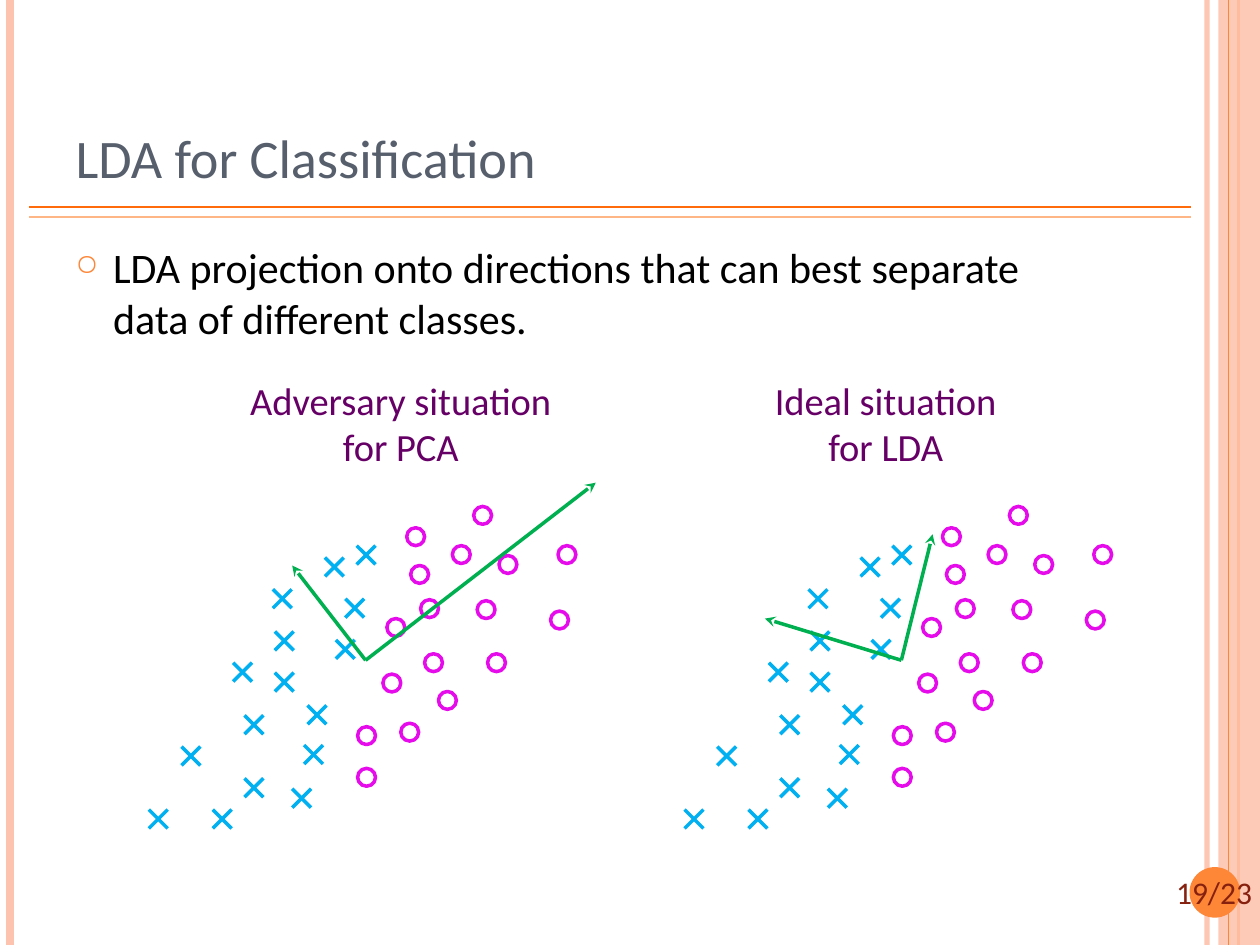
"""Build the slide comparing PCA and LDA projections of two classes."""
from lxml import etree
from pptx import Presentation
from pptx.dml.color import RGBColor
from pptx.enum import shapes, text
from pptx.oxml import ns
from pptx.util import Cm, Pt


def rgb(colour):
    return RGBColor.from_string(colour)


def add_line(x1, y1, x2, y2, colour, width, arrow=False, alpha=None):
    line = slide.shapes.add_connector(shapes.MSO_CONNECTOR.STRAIGHT, Cm(x1), Cm(y1), Cm(x2), Cm(y2))
    line.line.color.rgb = rgb(colour)
    line.line.width = Pt(width)
    properties = line._element.spPr
    etree.SubElement(properties, ns.qn("a:effectLst"))
    if arrow:
        etree.SubElement(properties.find(ns.qn("a:ln")), ns.qn("a:tailEnd"), type="stealth")
    if alpha:
        etree.SubElement(next(properties.iter(ns.qn("a:srgbClr"))), ns.qn("a:alpha"), val=str(alpha * 1000))


PEACH, ORANGE = "FEC3AE", "FE8637"
BLUE, MAGENTA, GREEN, PURPLE = "00B0F0", "E60BEB", "00B050", "660066"
HEIGHT = 19.05

presentation = Presentation()
presentation.slide_width, presentation.slide_height = Cm(25.4), Cm(HEIGHT)
slide = presentation.slides.add_slide(presentation.slide_layouts[5])

add_line(24.33, 0, 24.33, HEIGHT, PEACH, 3, alpha=93)
add_line(0.2, 0, 0.2, HEIGHT, PEACH, 4.5)
add_line(24.97, 0, 24.97, HEIGHT, ORANGE, 1.5)
band = slide.shapes.add_shape(shapes.MSO_SHAPE.RECTANGLE, Cm(24.56), 0, Cm(0.84), Cm(HEIGHT))
band.shadow.inherit = False
band.fill.solid()
band.fill.fore_color.rgb = rgb(PEACH)
band.line.fill.background()
band_colour = next(band._element.spPr.iter(ns.qn("a:srgbClr")))
etree.SubElement(band_colour, ns.qn("a:alpha"), val="87000")
add_line(24.77, 0, 24.77, HEIGHT, ORANGE, 0.75)
add_line(0.58, 4.17, 24, 4.17, "FF6B0A", 1)
add_line(0.58, 4.37, 24, 4.37, "FEB687", 1)

badge = slide.shapes.add_shape(shapes.MSO_SHAPE.OVAL, Cm(23.98), Cm(17.48), Cm(1.02), Cm(1.02))
badge.shadow.inherit = False
badge.fill.solid()
badge.fill.fore_color.rgb = rgb(ORANGE)
badge.line.fill.background()

title = slide.shapes.title
title.left, title.top, title.width, title.height = Cm(1.27), Cm(0.76), Cm(20.75), Cm(3.18)
title.text_frame.text = "LDA for Classification"
title.text_frame.vertical_anchor = text.MSO_ANCHOR.BOTTOM
title_paragraph = title.text_frame.paragraphs[0]
title_paragraph.alignment = text.PP_ALIGN.LEFT
title_paragraph.font.name = "Calibri"
title_paragraph.font.size = Pt(31)
title_paragraph.font.color.rgb = rgb("575F6D")

crosses = [
    (3.85, 15.24), (6.39, 14.41), (7.15, 12.26), (6.32, 15.21), (5.73, 13.75), (3.19, 16.51),
    (4.48, 16.51), (6.74, 11.43), (7.38, 11.19), (4.89, 13.55), (5.73, 12.92), (6.96, 13.09),
    (6.08, 16.09), (5.69, 12.07), (5.12, 15.88), (5.12, 14.61),
]
circles = [
    (11.43, 11.18), (7.39, 14.83), (10.01, 13.36), (8.74, 13.36), (8.26, 14.76), (11.28, 12.5),
    (10.24, 11.38), (8.38, 10.82), (9.73, 10.39), (7.9, 13.77), (8.46, 11.58), (7.39, 15.67),
    (7.98, 12.65), (9.8, 12.29), (9.02, 14.12), (8.66, 12.27), (9.3, 11.18),
]
plots = [
    (0, [(12.01, 9.73), (5.89, 11.4)]),
    (10.8, [(18.8, 10.77), (15.42, 12.47)]),
]
ARM, RADIUS = 0.19, 0.18
for offset, arrow_tips in plots:
    for x, y in crosses:
        x += offset
        add_line(x - ARM, y - ARM, x + ARM, y + ARM, BLUE, 2)
        add_line(x + ARM, y - ARM, x - ARM, y + ARM, BLUE, 2)
    for x, y in circles:
        circle = slide.shapes.add_shape(
            shapes.MSO_SHAPE.OVAL, Cm(x + offset - RADIUS), Cm(y - RADIUS), Cm(2 * RADIUS), Cm(2 * RADIUS))
        circle.shadow.inherit = False
        circle.fill.background()
        circle.line.color.rgb = rgb(MAGENTA)
        circle.line.width = Pt(2)
    for tip_x, tip_y in arrow_tips:
        add_line(7.37 + offset, 13.31, tip_x, tip_y, GREEN, 2, arrow=True)

labels = [
    (4.65, 7.47, 6.86, 2.13, ["Adversary situation", "for PCA"], 22, PURPLE),
    (15.34, 7.47, 5.03, 2.13, ["Ideal situation", "for LDA"], 22, PURPLE),
    (23.32, 17.48, 2.31, 1.02, ["19/23"], 18, "862110"),
]
for left, top, width, height, lines, size, colour in labels:
    label = slide.shapes.add_textbox(Cm(left), Cm(top), Cm(width), Cm(height))
    label.text_frame.word_wrap = False
    label.text_frame.text = "\n".join(lines)
    for paragraph in label.text_frame.paragraphs:
        paragraph.alignment = text.PP_ALIGN.CENTER
        paragraph.font.name = "Calibri"
        paragraph.font.size = Pt(size)
        paragraph.font.color.rgb = rgb(colour)

body = slide.shapes.add_textbox(Cm(1.27), Cm(4.75), Cm(20.75), Cm(2.3))
body.text_frame.word_wrap = True
body.text_frame.text = "LDA projection onto directions that can best separate data of different classes."
statement = body.text_frame.paragraphs[0]
bullet = statement._p.get_or_add_pPr()
bullet.set("marL", str(Cm(0.76)))
bullet.set("indent", str(-Cm(0.76)))
bullet_colour = etree.SubElement(bullet, ns.qn("a:buClr"))
etree.SubElement(bullet_colour, ns.qn("a:srgbClr"), val=ORANGE)
etree.SubElement(bullet, ns.qn("a:buSzPct"), val="70000")
etree.SubElement(bullet, ns.qn("a:buChar"), char="○")
statement.font.name = "Calibri"
statement.font.size = Pt(24)
statement.font.color.rgb = rgb("000000")

presentation.save("out.pptx")
